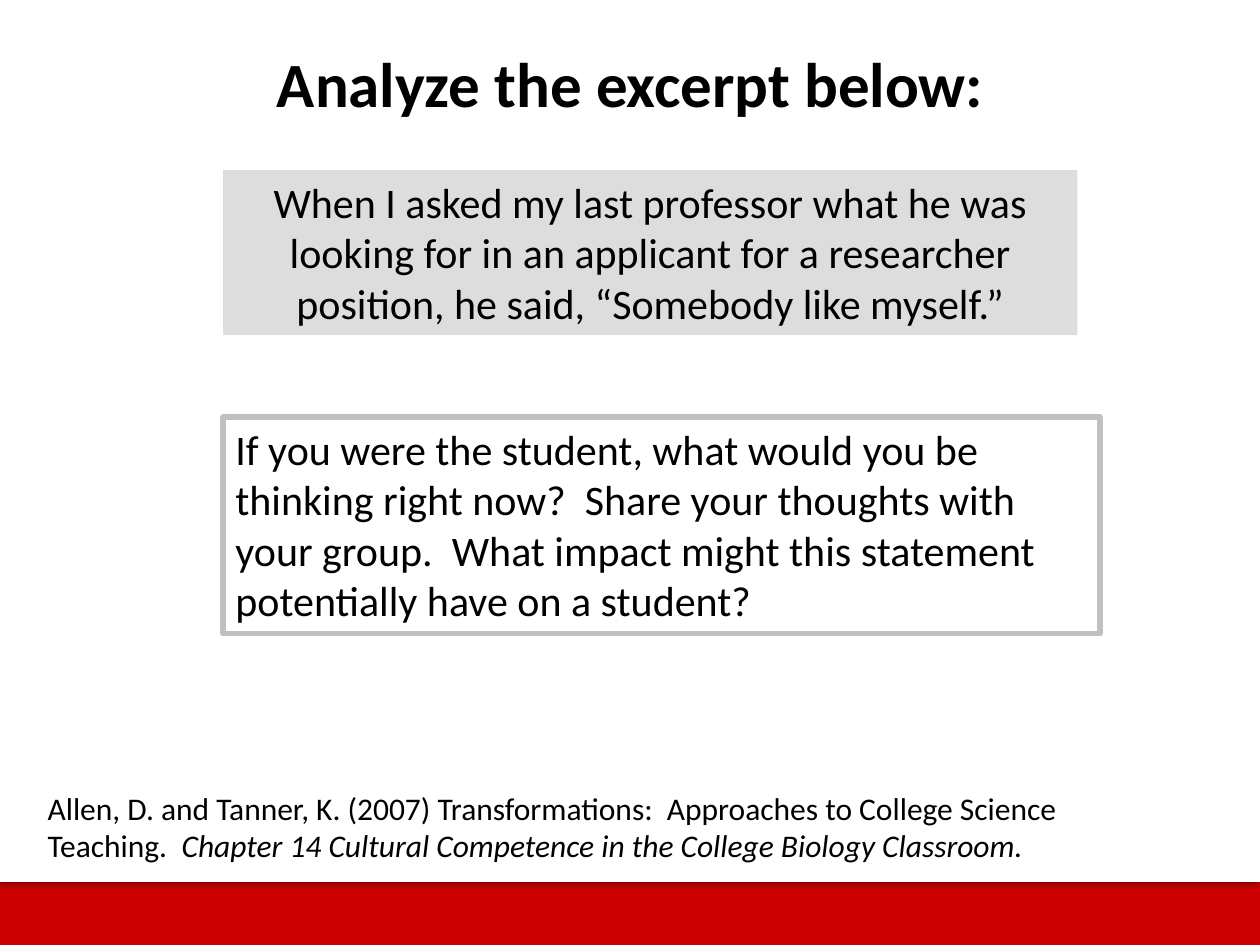
from math import cos, pi, sin

from lxml.etree import SubElement
from pptx import Presentation
from pptx.dml.color import RGBColor
from pptx.enum.shapes import MSO_SHAPE as Shape
from pptx.enum.text import MSO_ANCHOR as Anchor, PP_ALIGN as Align
from pptx.oxml.ns import qn
from pptx.util import Inches, Pt

RED = RGBColor(0xCC, 0x00, 0x00)
WHITE = RGBColor(0xFF, 0xFF, 0xFF)
BLACK = RGBColor(0x00, 0x00, 0x00)
LIGHT_GRAY = RGBColor(0xDD, 0xDD, 0xDD)
BORDER_GRAY = RGBColor(0xC0, 0xC0, 0xC0)
FONT = "Calibri"


def add_soft_shadow(shape):
    shape.shadow.inherit = False
    effects = shape._element.spPr.find(qn("a:effectLst"))
    shadow = SubElement(effects, qn("a:outerShdw"), blurRad=str(Pt(3.1)),
                        dist=str(Pt(1.8)), dir="5400000", rotWithShape="0")
    color = SubElement(shadow, qn("a:srgbClr"), val="000000")
    SubElement(color, qn("a:alpha"), val="35000")


def add_panel(page, width, height, radius, steps=48):
    """White panel from the top left corner, rounded at bottom right."""
    angles = [pi / 2 * step / steps for step in range(steps + 1)]
    corner = [(width - radius + radius * cos(angle),
               height - radius + radius * sin(angle)) for angle in angles]
    outline = [(width, 0), *corner, (0, height)]
    builder = page.shapes.build_freeform(0, 0, scale=Inches(1))
    builder.add_line_segments(outline, close=True)
    panel = builder.convert_to_shape()
    panel.fill.solid()
    panel.fill.fore_color.rgb = WHITE
    panel.line.fill.background()
    add_soft_shadow(panel)


def write_text(shape, spans, size, bold=False, align=Align.LEFT):
    """Fill a shape with one paragraph of (text, italic) spans."""
    frame = shape.text_frame
    frame.word_wrap = True
    frame.vertical_anchor = Anchor.TOP
    para = frame.paragraphs[0]
    para.alignment = align
    font = para.font
    font.name, font.size, font.bold = FONT, Pt(size), bold
    font.color.rgb = BLACK
    for text, italic in spans:
        span = para.add_run()
        span.text = text
        if italic:
            span.font.italic = True


def add_text(page, left, top, width, height, spans, size, bold=False):
    box = page.shapes.add_textbox(*map(Inches, (left, top, width, height)))
    write_text(box, spans, size, bold)


def add_box(page, left, top, width, height, text, fill=None, line=None,
            align=Align.LEFT):
    box = page.shapes.add_shape(
        Shape.RECTANGLE, *map(Inches, (left, top, width, height)))
    box.shadow.inherit = False
    if fill is None:
        box.fill.background()
    else:
        box.fill.solid()
        box.fill.fore_color.rgb = fill
    if line is None:
        box.line.fill.background()
    else:
        box.line.color.rgb = line
        box.line.width = Pt(3)
    write_text(box, [(text, False)], 24, align=align)


def main():
    deck = Presentation()
    deck.slide_width, deck.slide_height = Inches(10), Inches(7.5)
    page = deck.slides.add_slide(deck.slide_layouts[6])

    # Red background with the white panel
    page.background.fill.solid()
    page.background.fill.fore_color.rgb = RED
    add_panel(page, 9.75, 7, 0.93)

    # Title
    add_text(page, 2.1, 0.3, 6, 0.71,
             [("Analyze the excerpt below:", False)], 36, bold=True)

    # Excerpt and question
    add_box(page, 1.77, 1.35, 6.78, 1.31,
            "When I asked my last professor what he was looking for in an "
            "applicant for a researcher position, he said, “Somebody like "
            "myself.”", fill=LIGHT_GRAY, align=Align.CENTER)
    add_box(page, 1.77, 3.31, 6.96, 1.72,
            "If you were the student, what would you be thinking right now?  "
            "Share your thoughts with your group.  What impact might this "
            "statement potentially have on a student?", line=BORDER_GRAY)

    # Citation
    add_text(page, 0.28, 6.21, 9.07, 0.71, [
        ("Allen, D. and Tanner, K. (2007) Transformations:  Approaches to "
         "College Science Teaching.  ", False),
        ("Chapter 14 Cultural Competence in the College Biology Classroom.",
         True),
    ], 18)

    deck.save("out.pptx")


if __name__ == "__main__":
    main()
